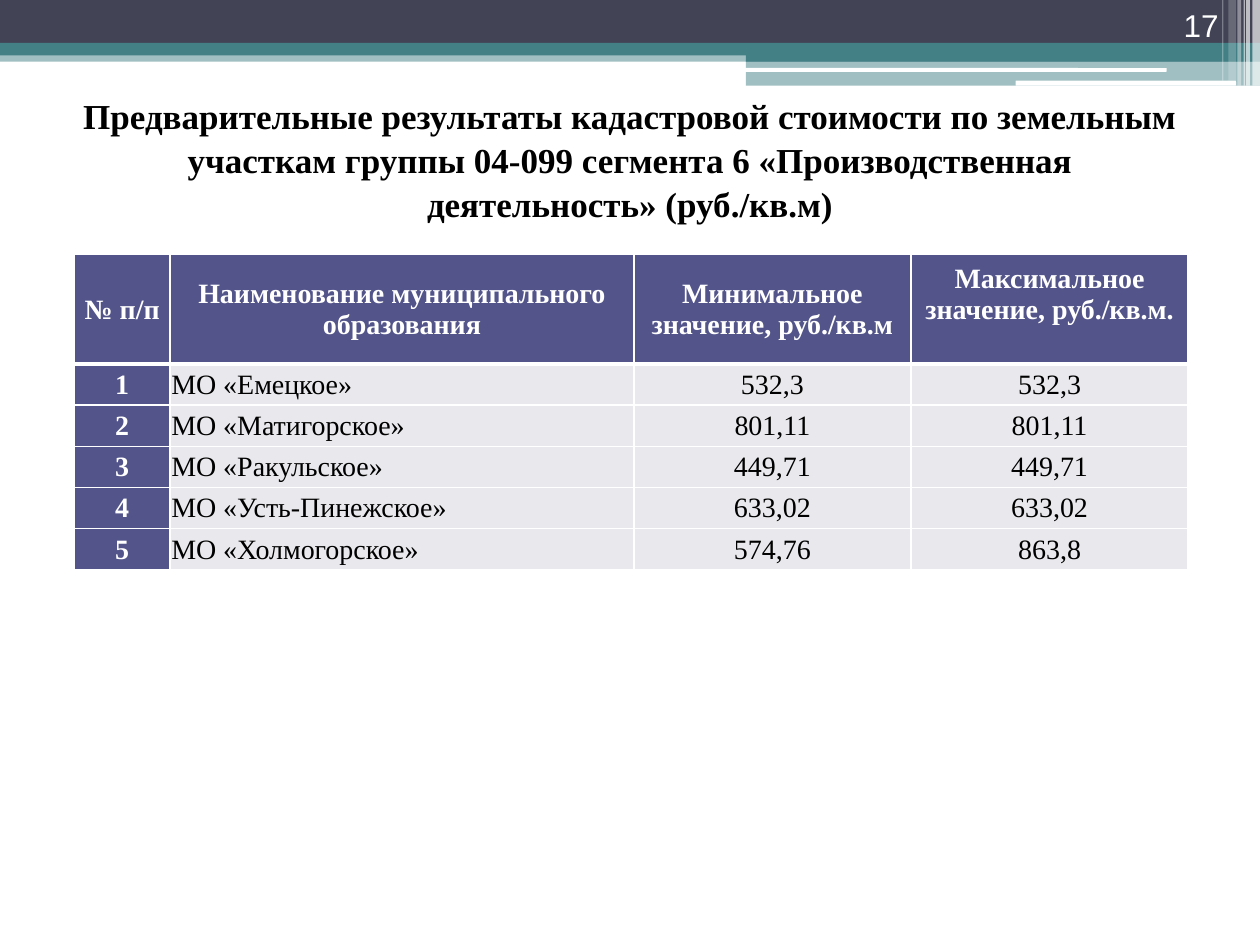
from dataclasses import dataclass

from lxml import etree
from pptx import Presentation
from pptx.dml.color import RGBColor
from pptx.enum.shapes import MSO_SHAPE
from pptx.enum.text import MSO_ANCHOR, MSO_AUTO_SIZE, PP_ALIGN
from pptx.oxml.ns import qn
from pptx.util import Inches, Pt

RECTANGLE = MSO_SHAPE.RECTANGLE
ROUNDED = MSO_SHAPE.ROUNDED_RECTANGLE
TOP, MIDDLE, BOTTOM = MSO_ANCHOR.TOP, MSO_ANCHOR.MIDDLE, MSO_ANCHOR.BOTTOM
LEFT, CENTER, RIGHT = PP_ALIGN.LEFT, PP_ALIGN.CENTER, PP_ALIGN.RIGHT
NO_AUTOFIT = MSO_AUTO_SIZE.NONE


@dataclass(frozen=True)
class Theme:
    navy: str = "424456"
    teal: str = "438086"
    white: str = "FFFFFF"
    black: str = "000000"
    header: str = "53548A"
    body: str = "E9E9ED"
    serif: str = "Times New Roman"
    sans: str = "Arial"
    title_size: int = 20
    number_size: int = 18
    table_size: int = 16


THEME = Theme()

TITLE = ("Предварительные результаты кадастровой стоимости по земельным участкам "
         "группы 04-099 сегмента 6 «Производственная деятельность» (руб./кв.м)")
HEADERS = ["№ п/п", "Наименование муниципального образования",
           "Минимальное значение, руб./кв.м", "Максимальное значение, руб./кв.м."]
MUNICIPALITIES = [
    ("МО «Емецкое»", "532,3", "532,3"),
    ("МО «Матигорское»", "801,11", "801,11"),
    ("МО «Ракульское»", "449,71", "449,71"),
    ("МО «Усть-Пинежское»", "633,02", "633,02"),
    ("МО «Холмогорское»", "574,76", "863,8"),
]
COLUMN_WIDTHS = [0.76, 3.68, 2.2, 2.2]
TABLE_HEIGHT, HEADER_HEIGHT = 2.5, 0.87

# Header bands: left, top, width, height, colour, opacity in percent
BANDS = [
    (0, 0.4, 10, 0.09, THEME.teal, 50),
    (0, 0, 10, 0.34, THEME.navy, 100),
    (0, 0.34, 10, 0.1, THEME.teal, 100),
    (5.92, 0.39, 4.08, 0.1, THEME.teal, 100),
    (5.92, 0.48, 4.08, 0.2, THEME.teal, 50),
]
# White rounded lines: left, top, width, height
WHITE_LINES = [(5.91, 0.54, 3.35, 0.03), (8.06, 0.64, 1.75, 0.04)]
# Stripes at the right edge: left, width, height, opacity in percent
STRIPES = [
    (9.94, 0.06, 0.68, 65),
    (9.89, 0.03, 0.68, 65),
    (9.87, 0.01, 0.68, 60),
    (9.82, 0.03, 0.68, 40),
    (9.75, 0.06, 0.64, 20),
    (9.7, 0.01, 0.64, 30),
]


def add_block(slide, left, top, width, height, color, opacity=100, kind=RECTANGLE):
    shape = slide.shapes.add_shape(
        kind, Inches(left), Inches(top), Inches(width), Inches(height))
    shape.shadow.inherit = False
    shape.line.fill.background()
    shape.fill.solid()
    shape.fill.fore_color.rgb = RGBColor.from_string(color)
    if opacity < 100:
        color_element = shape.fill._xPr.find(".//" + qn("a:srgbClr"))
        etree.SubElement(color_element, qn("a:alpha"), val=str(opacity * 1000))


def set_text(text_frame, text, size, color, font=THEME.serif, bold=False, align=CENTER):
    text_frame.text = text
    text_frame.word_wrap = True
    paragraph = text_frame.paragraphs[0]
    paragraph.alignment = align
    run_font = paragraph.runs[0].font
    run_font.name, run_font.size, run_font.bold = font, Pt(size), bold
    run_font.color.rgb = RGBColor.from_string(color)
    return paragraph


def set_borders(cell, top_width, bottom_width):
    properties = cell._tc.get_or_add_tcPr()
    widths = {"lnL": 1, "lnR": 1, "lnT": top_width, "lnB": bottom_width}
    for side, width in widths.items():
        line = etree.SubElement(properties, qn("a:" + side), w=str(Pt(width)))
        fill = etree.SubElement(line, qn("a:solidFill"))
        etree.SubElement(fill, qn("a:srgbClr"), val=THEME.white)


def add_header_art(slide):
    for band in BANDS:
        add_block(slide, *band)
    for line in WHITE_LINES:
        add_block(slide, *line, THEME.white, kind=ROUNDED)
    for left, width, height, opacity in STRIPES:
        add_block(slide, left, 0, width, height, THEME.white, opacity)


def add_page_number(slide, number):
    box = slide.shapes.add_textbox(Inches(8.94), Inches(0), Inches(0.83), Inches(0.4))
    box.text_frame.vertical_anchor = BOTTOM
    set_text(box.text_frame, number, THEME.number_size, THEME.white, THEME.sans, align=RIGHT)


def format_title(slide):
    title = slide.shapes.title
    title.left, title.top = Inches(0.5), Inches(0.68)
    title.width, title.height = Inches(9), Inches(1.17)
    title.text_frame.vertical_anchor = TOP
    title.text_frame.auto_size = NO_AUTOFIT
    paragraph = set_text(title.text_frame, TITLE, THEME.title_size, THEME.black, bold=True)
    paragraph.line_spacing = 1.05


def add_value_table(slide):
    rows = [HEADERS] + [(str(number), *values)
                        for number, values in enumerate(MUNICIPALITIES, start=1)]
    table = slide.shapes.add_table(
        len(rows), len(HEADERS), Inches(0.59), Inches(2.02),
        Inches(sum(COLUMN_WIDTHS)), Inches(TABLE_HEIGHT)).table
    table.first_col = True
    table.horz_banding = False
    for column, width in zip(table.columns, COLUMN_WIDTHS):
        column.width = Inches(width)
    body_height = (TABLE_HEIGHT - HEADER_HEIGHT) / len(MUNICIPALITIES)

    for row_index, values in enumerate(rows):
        table.rows[row_index].height = Inches(body_height if row_index else HEADER_HEIGHT)
        for column_index, value in enumerate(values):
            cell = table.cell(row_index, column_index)
            is_header = row_index == 0 or column_index == 0
            cell.margin_left = cell.margin_right = cell.margin_top = Inches(0.01)
            cell.margin_bottom = Inches(0)
            cell.vertical_anchor = MIDDLE
            set_borders(cell, 3 if row_index == 1 else 1, 3 if row_index == 0 else 1)
            cell.fill.solid()
            cell.fill.fore_color.rgb = RGBColor.from_string(
                THEME.header if is_header else THEME.body)
            set_text(cell.text_frame, value, THEME.table_size,
                     THEME.white if is_header else THEME.black, bold=is_header,
                     align=LEFT if row_index and column_index == 1 else CENTER)

    # The last heading sits one line higher than the others
    table.cell(0, len(HEADERS) - 1).margin_bottom = Inches(0.25)


def main():
    presentation = Presentation()
    presentation.slide_width, presentation.slide_height = Inches(10), Inches(7.5)
    slide = presentation.slides.add_slide(presentation.slide_layouts[5])
    add_header_art(slide)
    add_page_number(slide, "17")
    format_title(slide)
    add_value_table(slide)
    presentation.save("out.pptx")


if __name__ == "__main__":
    main()
